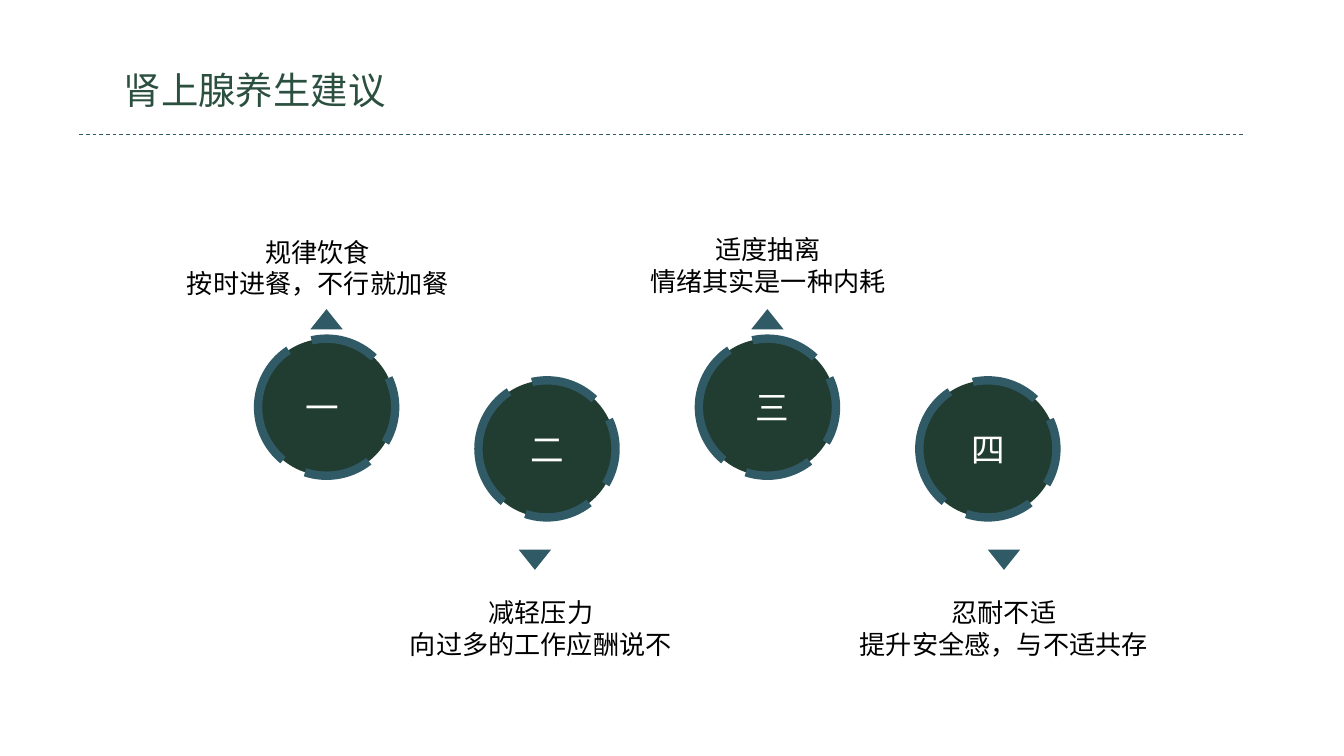
from lxml import etree
from pptx import Presentation
from pptx.dml.color import RGBColor
from pptx.enum.dml import MSO_LINE_DASH_STYLE as DASH
from pptx.enum.shapes import MSO_CONNECTOR, MSO_SHAPE
from pptx.enum.text import MSO_ANCHOR, MSO_AUTO_SIZE, PP_ALIGN
from pptx.oxml.ns import qn
from pptx.util import Inches, Pt

FONT = "Noto Sans CJK SC"
TEAL = "305A66"


def color(value):
    return RGBColor.from_string(value)


def write(box, text, size, tint, wrap=True):
    frame = box.text_frame
    frame.text = text
    frame.word_wrap = wrap
    frame.auto_size = MSO_AUTO_SIZE.SHAPE_TO_FIT_TEXT
    frame.vertical_anchor = MSO_ANCHOR.TOP
    for paragraph in frame.paragraphs:
        paragraph.alignment = PP_ALIGN.CENTER
        paragraph.line_spacing = Pt(size * 1.2)
        for run in paragraph.runs:
            run.font.name = FONT
            run.font.size = Pt(size)
            run.font.color.rgb = color(tint)
            east_asian = etree.SubElement(run.font._element, qn("a:ea"))
            east_asian.set("typeface", FONT)


prs = Presentation()
prs.slide_width, prs.slide_height = Inches(10), Inches(10 * 9 / 16)
slide = prs.slides.add_slide(prs.slide_layouts[5])
shapes = slide.shapes

title = shapes.title
title.left, title.top = Inches(0.67), Inches(0.45)
title.width, title.height = Inches(2.45), Inches(0.44)
write(title, "肾上腺养生建议", 20, "2C5040")

divider = shapes.add_connector(
    MSO_CONNECTOR.STRAIGHT, Inches(0.59), Inches(1), Inches(9.25), Inches(1))
divider.line.color.rgb = color(TEAL)
divider.line.width = Pt(0.5)
divider.line.dash_style = DASH.DASH
etree.SubElement(divider._element.spPr, qn("a:effectLst"))

tips = [
    ("一", "规律饮食\n按时进餐，不行就加餐", 1.29, 1.71, 2.15, 2.31, 2.17),
    ("二", "减轻压力\n向过多的工作应酬说不", 2.95, 4.39, 2.15, 3.86, 3.85),
    ("三", "适度抽离\n情绪其实是一种内耗", 4.68, 1.69, 2.07, 5.59, 5.52),
    ("四", "忍耐不适\n提升安全感，与不适共存", 6.27, 4.39, 2.4, 7.35, 7.13),
]

for index, (numeral, advice, left, top, width, arrow_left, numeral_left) in enumerate(tips):
    below = index % 2 == 1
    circle_top = 2.83 if below else 2.52

    arrow = shapes.add_shape(
        MSO_SHAPE.ISOSCELES_TRIANGLE, Inches(arrow_left),
        Inches(4.09 if below else 2.3), Inches(0.24), Inches(0.15))
    arrow.rotation = 180 if below else 0
    arrow.shadow.inherit = False
    arrow.fill.solid()
    arrow.fill.fore_color.rgb = color(TEAL)
    arrow.line.fill.background()

    circle = shapes.add_shape(
        MSO_SHAPE.OVAL, Inches(1.92 + 1.64 * index), Inches(circle_top),
        Inches(1.02), Inches(1.02))
    circle.shadow.inherit = False
    circle.fill.solid()
    circle.fill.fore_color.rgb = color("213C30")
    circle.line.color.rgb = color(TEAL)
    circle.line.width = Pt(4.5)
    circle.line.dash_style = DASH.LONG_DASH

    caption = shapes.add_textbox(Inches(left), Inches(top), Inches(width), Inches(0.57))
    write(caption, advice, 14, "000000")

    label = shapes.add_textbox(
        Inches(numeral_left), Inches(circle_top + 0.31), Inches(0.45), Inches(0.4))
    write(label, numeral, 18, "FFFFFF", wrap=False)

prs.save("out.pptx")
